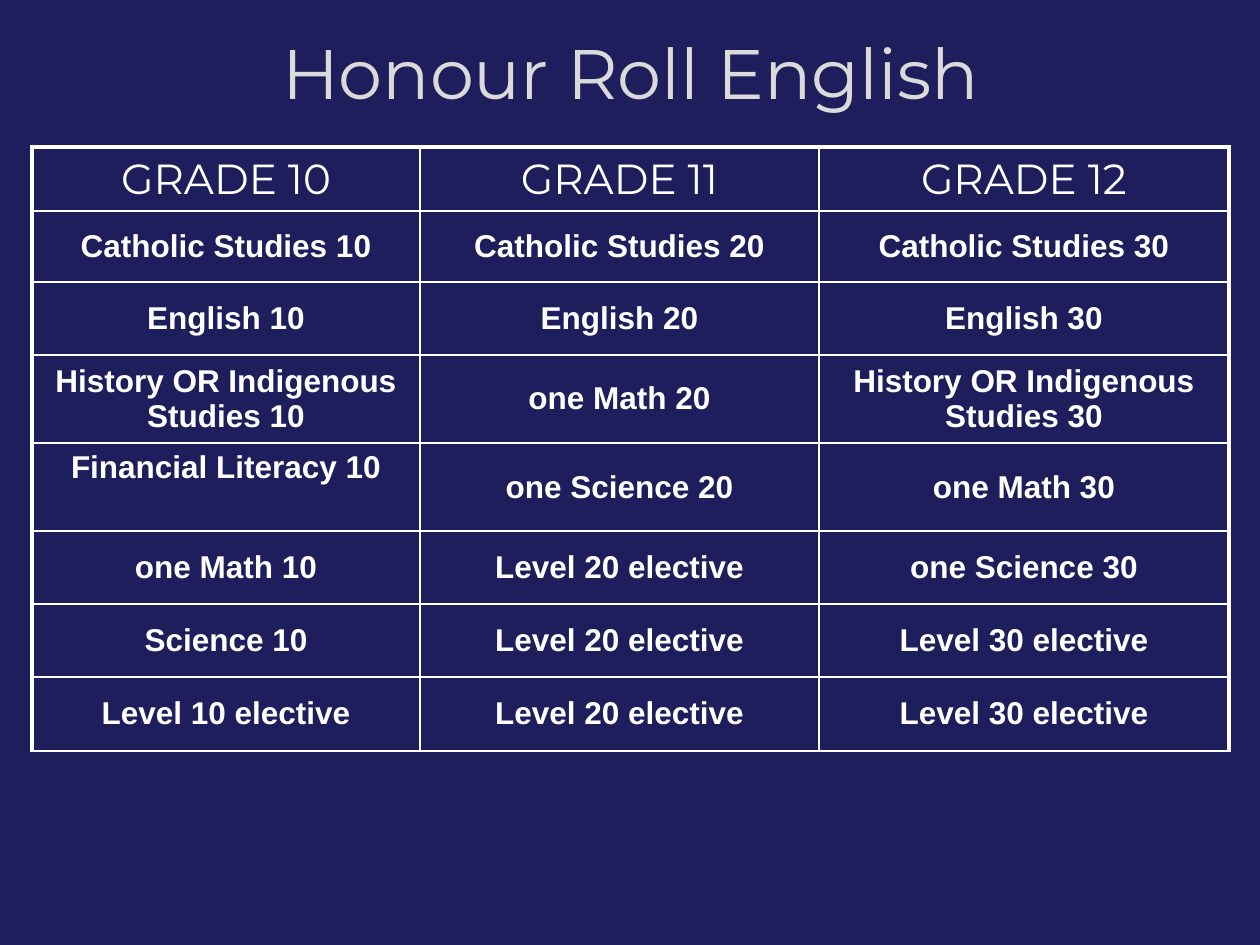
from lxml.etree import SubElement
from pptx import Presentation
from pptx.dml.color import RGBColor
from pptx.enum.text import MSO_ANCHOR, PP_ALIGN
from pptx.oxml import parse_xml
from pptx.oxml.ns import nsdecls, qn
from pptx.util import Pt

PX = 914400 // 126
NAVY = RGBColor(0x1E, 0x1E, 0x5C)
WHITE = RGBColor(0xFF, 0xFF, 0xFF)
GREY = RGBColor(0xDA, 0xDA, 0xDA)
COLS = [388, 399, 410]
ROWS = [64, 71, 73, 84, 88, 73, 73, 74]
DATA = [
    ["GRADE 10", "GRADE 11", "GRADE 12"],
    ["Catholic Studies 10", "Catholic Studies 20", "Catholic Studies 30"],
    ["English 10", "English 20", "English 30"],
    ["History OR Indigenous Studies 10", "one Math 20",
     "History OR Indigenous Studies 30"],
    ["Financial Literacy 10", "one Science 20", "one Math 30"],
    ["one Math 10", "Level 20 elective", "one Science 30"],
    ["Science 10", "Level 20 elective", "Level 30 elective"],
    ["Level 10 elective", "Level 20 elective", "Level 30 elective"],
]


def write(frame, text, name, size, color, bold=False):
    frame.text = text
    par = frame.paragraphs[0]
    par.alignment = PP_ALIGN.CENTER
    run = par.runs[0]
    run.font.size = Pt(size)
    run.font.bold = bold
    run.font.color.rgb = color
    run.font.name = name
    return run


def edge(cell, tag, width):
    line = SubElement(cell._tc.get_or_add_tcPr(), qn(tag), w=str(Pt(width)))
    fill = SubElement(line, qn("a:solidFill"))
    SubElement(fill, qn("a:srgbClr"), val=str(WHITE))


deck = Presentation()
deck.slide_width = 1260 * PX
deck.slide_height = 945 * PX
slide = deck.slides.add_slide(deck.slide_layouts[6])
slide.background.fill.solid()
slide.background.fill.fore_color.rgb = NAVY

title = slide.shapes.add_textbox(95 * PX, 14 * PX, 1071 * PX, 116 * PX)
frame = title.text_frame
frame.word_wrap = True
frame.vertical_anchor = MSO_ANCHOR.MIDDLE
run = write(frame, "Honour Roll English", "Montserrat", 40, GREY)
shade = parse_xml(
    f'<a:effectLst {nsdecls("a")}>'
    '<a:outerShdw blurRad="38100" dist="25400" dir="2700000">'
    '<a:srgbClr val="000000"><a:alpha val="50000"/></a:srgbClr>'
    '</a:outerShdw></a:effectLst>')
run.font._element.insert(1, shade)

table = slide.shapes.add_table(
    len(ROWS), len(COLS), 32 * PX, 147 * PX,
    sum(COLS) * PX, sum(ROWS) * PX).table
table.first_row = False
table.horz_banding = False
for col, width in zip(table.columns, COLS):
    col.width = width * PX
for row, height in zip(table.rows, ROWS):
    row.height = height * PX

for r, names in enumerate(DATA):
    for c, name in enumerate(names):
        cell = table.cell(r, c)
        cell.vertical_anchor = MSO_ANCHOR.MIDDLE
        edge(cell, "a:lnL", 2.25 if c == 0 else 1)
        edge(cell, "a:lnR", 2.25 if c == len(COLS) - 1 else 1)
        edge(cell, "a:lnT", 2.25 if r == 0 else 1)
        edge(cell, "a:lnB", 1)
        cell.fill.background()
        if r == 0:
            write(cell.text_frame, name, "Montserrat", 24, WHITE)
        else:
            write(cell.text_frame, name, "Arial", 18, WHITE, True)
table.cell(4, 0).vertical_anchor = MSO_ANCHOR.TOP

deck.save("out.pptx")
